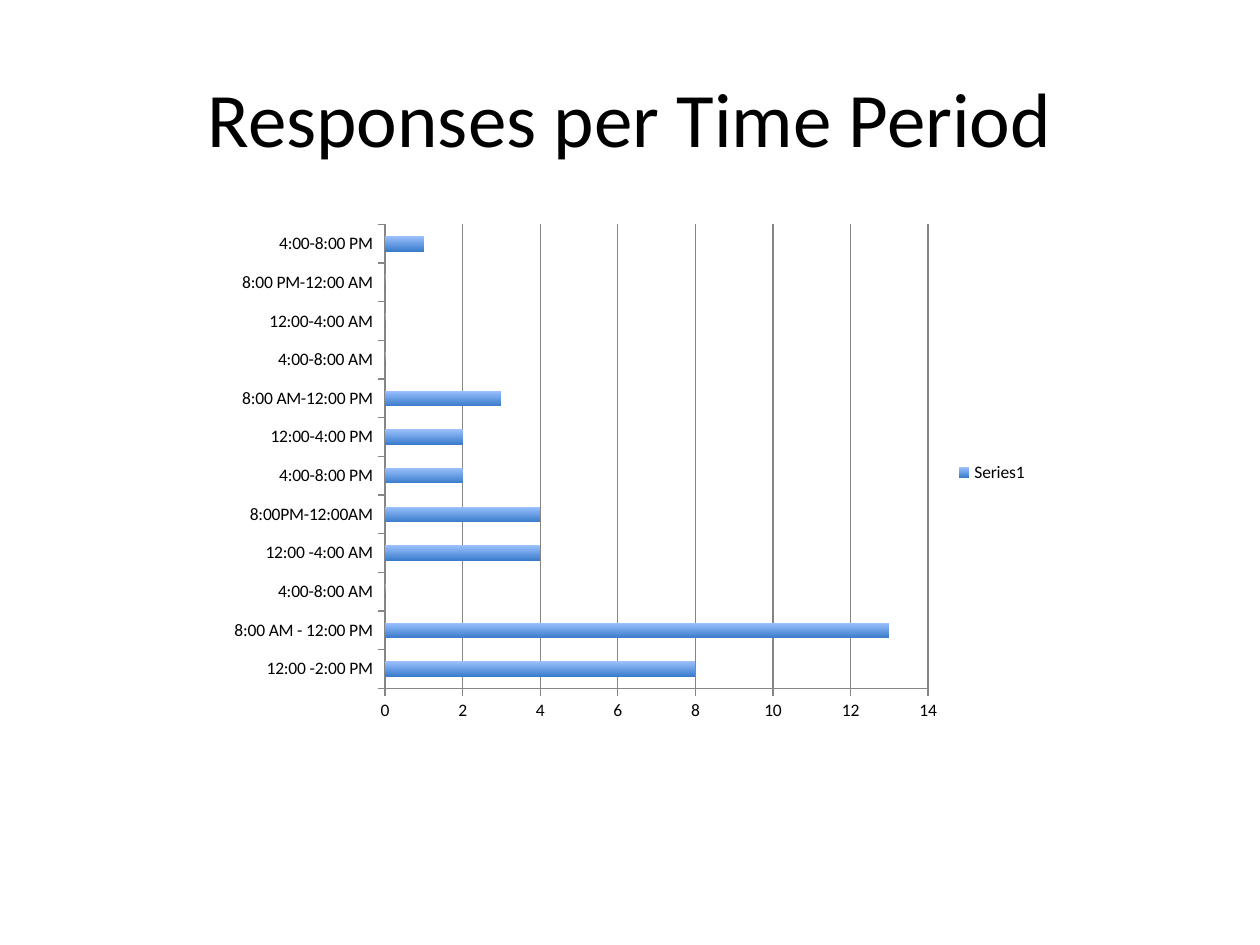
from typing import Any, NamedTuple

import pptx
import pptx.chart.data
import pptx.dml.color
import pptx.enum.chart
import pptx.enum.text
import pptx.util

Pt = pptx.util.Pt
FONT = "Calibri"
BLACK, GRAY = "000000", "868686"
BAR_BOTTOM, BAR_TOP = "3A7CCB", "9BC1FF"


class Box(NamedTuple):
    left: float
    top: float
    width: float
    height: float


class Period(NamedTuple):
    label: str
    responses: int


TITLE_BOX = Box(36, 21.6, 648, 90)
CHART_BOX = Box(124.56, 122.4, 470.16, 295.2)
PERIODS = [
    Period("12:00 -2:00 PM", 8),
    Period("8:00 AM - 12:00 PM", 13),
    Period("4:00-8:00 AM", 0),
    Period("12:00 -4:00 AM", 4),
    Period("8:00PM-12:00AM", 4),
    Period("4:00-8:00 PM", 2),
    Period("12:00-4:00 PM", 2),
    Period("8:00 AM-12:00 PM", 3),
    Period("4:00-8:00 AM", 0),
    Period("12:00-4:00 AM", 0),
    Period("8:00 PM-12:00 AM", 0),
    Period("4:00-8:00 PM", 1),
]


def rgb(value: str) -> pptx.dml.color.RGBColor:
    return pptx.dml.color.RGBColor.from_string(value)


def set_attrs(obj: Any, **values: Any) -> None:
    for name, value in values.items():
        setattr(obj, name, value)


def set_font(font: Any, size: float) -> None:
    set_attrs(font, name=FONT, size=Pt(size), bold=False)
    font.color.rgb = rgb(BLACK)


def set_line(line: Any) -> None:
    line.width = Pt(0.75)
    line.color.rgb = rgb(GRAY)


def add_title(s: Any, text: str, box: Box) -> None:
    sp = s.shapes.title
    set_attrs(sp, **{side: Pt(v) for side, v in box._asdict().items()})
    tf = sp.text_frame
    set_attrs(tf, word_wrap=True, vertical_anchor=pptx.enum.text.MSO_ANCHOR.MIDDLE)
    p = tf.paragraphs[0]
    p.alignment = pptx.enum.text.PP_ALIGN.CENTER
    r = p.add_run()
    r.text = text
    set_font(r.font, 44)


def add_response_chart(s: Any, periods: list[Period], box: Box) -> None:
    data = pptx.chart.data.CategoryChartData()
    data.categories = [period.label for period in periods]
    data.add_series("Series1", [period.responses for period in periods])
    chart = s.shapes.add_chart(
        pptx.enum.chart.XL_CHART_TYPE.BAR_STACKED, *map(Pt, box), data
    ).chart
    set_attrs(chart, has_title=False, has_legend=True)
    set_font(chart.font, 10)
    set_attrs(
        chart.legend,
        position=pptx.enum.chart.XL_LEGEND_POSITION.RIGHT,
        include_in_layout=False,
    )

    plot = chart.plots[0]
    set_attrs(plot, gap_width=150, overlap=100, vary_by_categories=False)
    fill = plot.series[0].format.fill
    fill.gradient()
    fill.gradient_angle = 90
    for stop, color in zip(fill.gradient_stops, (BAR_BOTTOM, BAR_TOP)):
        stop.color.rgb = rgb(color)

    for axis in (chart.category_axis, chart.value_axis):
        axis.major_tick_mark = pptx.enum.chart.XL_TICK_MARK.OUTSIDE
        axis.minor_tick_mark = pptx.enum.chart.XL_TICK_MARK.NONE
        set_line(axis.format.line)
    set_attrs(
        chart.value_axis,
        minimum_scale=0,
        maximum_scale=14,
        major_unit=2,
        has_major_gridlines=True,
    )
    set_line(chart.value_axis.major_gridlines.format.line)


def main() -> None:
    prs = pptx.Presentation()
    set_attrs(prs, slide_width=Pt(720), slide_height=Pt(540))
    s = prs.slides.add_slide(prs.slide_layouts.get_by_name("Title Only"))
    add_response_chart(s, PERIODS, CHART_BOX)
    add_title(s, "Responses per Time Period", TITLE_BOX)
    prs.save("out.pptx")


if __name__ == "__main__":
    main()
